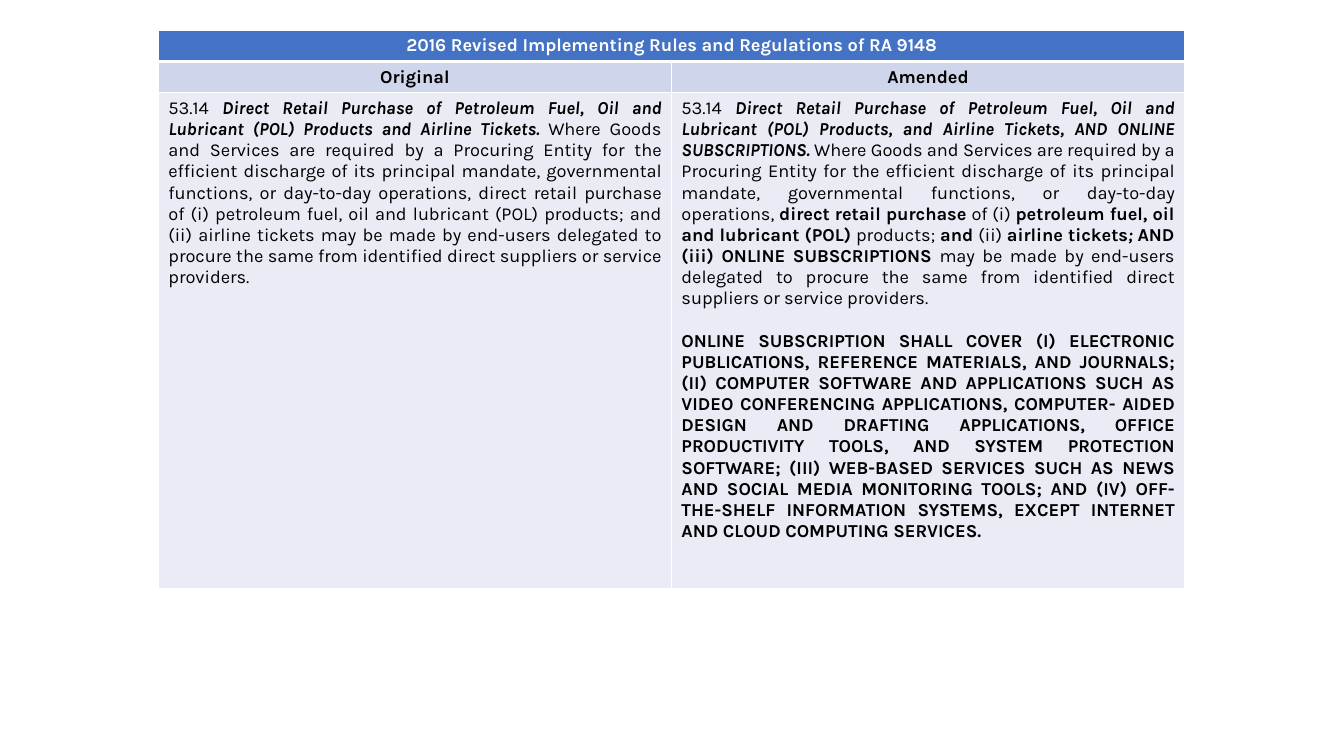
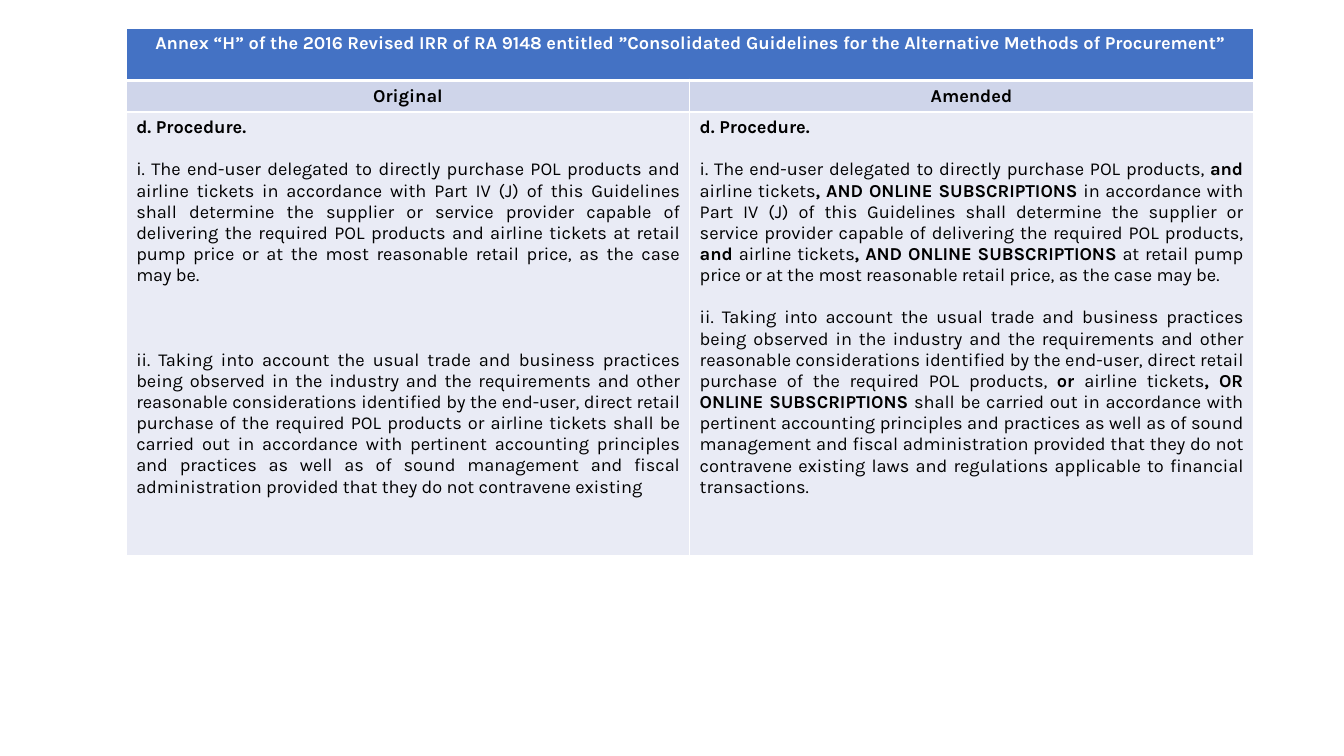
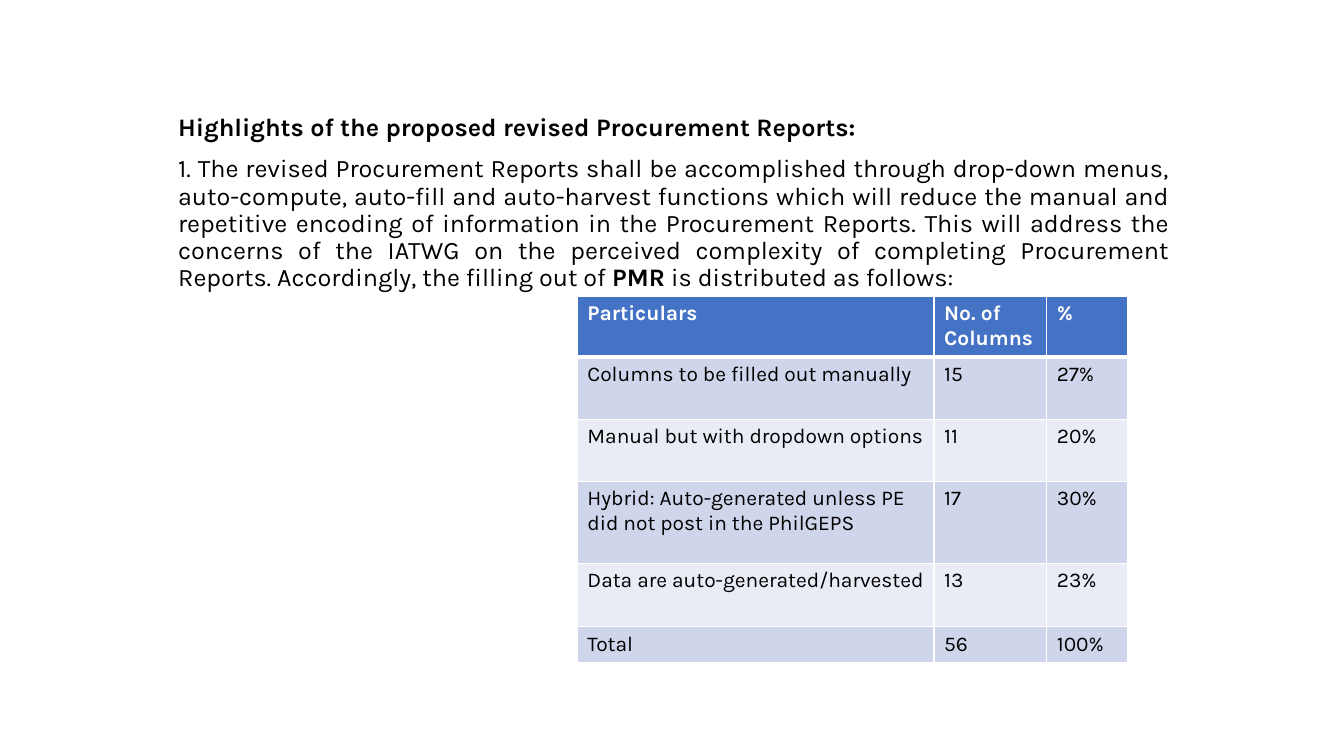
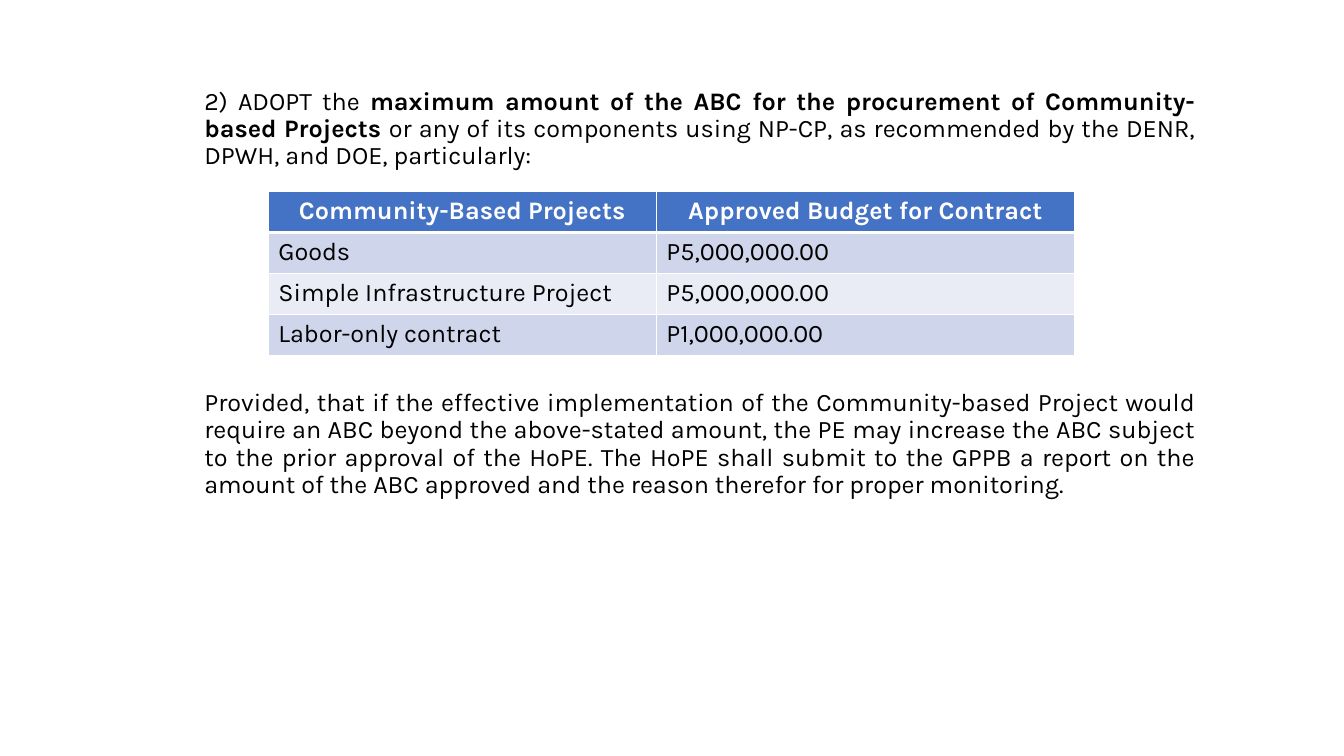
from dataclasses import dataclass

from lxml import etree
from pptx import Presentation, util as u
from pptx.dml import color
from pptx.enum import text as t
from pptx.oxml import ns

LEFT, MID, JUST = t.PP_ALIGN.LEFT, t.PP_ALIGN.CENTER, t.PP_ALIGN.JUSTIFY


@dataclass(frozen=True)
class Theme:
    font: str = "Karla"
    white: str = "FFFFFF"
    black: str = "000000"
    head: str = "4472C4"
    bands: tuple = ("CFD5EA", "E9EBF5")
    small: int = 13
    mid: int = 15
    large: int = 18
    thin: int = 1
    thick: int = 3
    line: float = 15.1


class Deck:
    def __init__(self, theme):
        self.theme = theme
        self.file = Presentation()
        self.file.slide_width = u.Cm(33.87)
        self.file.slide_height = u.Cm(19.05)
        self.slide = None

    def page(self):
        self.slide = self.file.slides.add_slide(self.file.slide_layouts[6])

    def words(self, frame, paras, size, ink, align, bold=False, lead=None):
        for i, (gap, words) in enumerate(paras):
            para = frame.paragraphs[0] if i == 0 else frame.add_paragraph()
            para.alignment = align
            para.line_spacing = lead
            if gap:
                para.space_before = u.Pt(gap)
            font = para.font
            font.name, font.size = self.theme.font, u.Pt(size)
            font.color.rgb = color.RGBColor.from_string(ink)
            parts = words.split("*")
            whole = len(parts) == 3 and not parts[0] and not parts[2]
            font.bold = bold or whole
            for j, part in enumerate(parts):
                for k, bit in enumerate(part.split("_")):
                    if not bit:
                        continue
                    run = para.add_run()
                    run.text = bit
                    if j % 2 and not whole:
                        run.font.bold = True
                    if k % 2:
                        run.font.italic = True

    def text(self, left, top, wide, high, paras):
        box = self.slide.shapes.add_textbox(*map(u.Cm, (left, top, wide, high)))
        box.text_frame.word_wrap = True
        look = self.theme
        self.words(box.text_frame, paras, look.large, look.black, JUST, lead=0.9)

    def edge(self, cell, sides):
        props = cell._tc.get_or_add_tcPr()
        for side, width in sides.items():
            line = etree.SubElement(props, ns.qn("a:ln" + side), w=str(u.Pt(width)))
            fill = etree.SubElement(line, ns.qn("a:solidFill"))
            etree.SubElement(fill, ns.qn("a:srgbClr"), val=self.theme.white)

    def table(self, left, top, cols, highs, rows, size, mids=0, align=LEFT):
        look = self.theme
        spot = map(u.Cm, (left, top, sum(cols), sum(highs)))
        grid = self.slide.shapes.add_table(len(highs), len(cols), *spot).table
        for col, wide in zip(grid.columns, cols):
            col.width = u.Cm(wide)
        for row, high in zip(grid.rows, highs):
            row.height = u.Cm(high)
        for i, row in enumerate(rows):
            if len(row) < len(cols):
                grid.cell(i, 0).merge(grid.cell(i, len(cols) - 1))
            for j in range(len(cols)):
                cell = grid.cell(i, j)
                self.edge(cell, {
                    "L": look.thin,
                    "R": look.thin,
                    "T": look.thick if i == 1 else look.thin,
                    "B": look.thick if i == 0 else look.thin,
                })
                cell.fill.solid()
                tone = look.bands[(i - 1) % 2] if i else look.head
                cell.fill.fore_color.rgb = color.RGBColor.from_string(tone)
                if j < len(row):
                    item = row[j]
                    paras = [(0, item)] if isinstance(item, str) else item
                    self.words(cell.text_frame, paras, size,
                               look.black if i else look.white,
                               MID if i < mids else align, bold=i == 0)

    def compare(self, left, top, wide, highs, title, old, new):
        self.page()
        rows = [[title], ["*Original*", "*Amended*"], [old, new]]
        self.table(left, top, [wide, wide], highs, rows, self.theme.small, 2, JUST)


def main():
    look = Theme()
    deck = Deck(look)
    gap = look.line

    deck.compare(
        3.99, 0.76, 12.93, [0.79, 0.79, 12.5],
        "2016 Revised Implementing Rules and Regulations of RA 9148",
        "53.14 *_Direct Retail Purchase of Petroleum Fuel, Oil and Lubricant (POL) "
        "Products and Airline Tickets. _*Where Goods and Services are required by a "
        "Procuring Entity for the efficient discharge of its principal mandate, "
        "governmental functions, or day-to-day operations, direct retail purchase of "
        "(i) petroleum fuel, oil and lubricant (POL) products; and (ii) airline tickets "
        "may be made by end-users delegated to procure the same from identified direct "
        "suppliers or service providers.",
        [(0, "53.14 *_Direct Retail Purchase of Petroleum Fuel, Oil and Lubricant (POL) "
             "Products, and Airline Tickets, AND ONLINE SUBSCRIPTIONS. _*Where Goods and "
             "Services are required by a Procuring Entity for the efficient discharge of "
             "its principal mandate, governmental functions, or day-to-day operations, "
             "*direct retail purchase *of (i) *petroleum fuel, oil and lubricant (POL) "
             "*products; *and *(ii) *airline tickets_; _AND (iii) ONLINE SUBSCRIPTIONS "
             "*may be made by end-users delegated to procure the same from identified "
             "direct suppliers or service providers."),
         (gap, "*ONLINE SUBSCRIPTION SHALL COVER (I) ELECTRONIC PUBLICATIONS, REFERENCE "
               "MATERIALS, AND JOURNALS; (II) COMPUTER SOFTWARE AND APPLICATIONS SUCH AS "
               "VIDEO CONFERENCING APPLICATIONS, COMPUTER- AIDED DESIGN AND DRAFTING "
               "APPLICATIONS, OFFICE PRODUCTIVITY TOOLS, AND SYSTEM PROTECTION SOFTWARE; "
               "(III) WEB-BASED SERVICES SUCH AS NEWS AND SOCIAL MEDIA MONITORING TOOLS; "
               "AND (IV) OFF-THE-SHELF INFORMATION SYSTEMS, EXCEPT INTERNET AND CLOUD "
               "COMPUTING SERVICES.*")])

    deck.compare(
        3.18, 0.71, 14.2, [1.32, 0.79, 11.18],
        "Annex “H” of the 2016 Revised IRR of RA 9148 entitled ”Consolidated Guidelines "
        "for the Alternative Methods of Procurement”",
        [(0, "*d. Procedure.*"),
         (gap, "i. The end-user delegated to directly purchase POL products and airline "
               "tickets in accordance with Part IV (J) of this Guidelines shall determine "
               "the supplier or service provider capable of delivering the required POL "
               "products and airline tickets at retail pump price or at the most "
               "reasonable retail price, as the case may be."),
         (3 * gap, "ii. Taking into account the usual trade and business practices being "
                   "observed in the industry and the requirements and other reasonable "
                   "considerations identified by the end-user, direct retail purchase of "
                   "the required POL products or airline tickets shall be carried out in "
                   "accordance with pertinent accounting principles and practices as well "
                   "as of sound management and fiscal administration provided that they "
                   "do not contravene existing")],
        [(0, "*d. Procedure.*"),
         (gap, "i. The end-user delegated to directly purchase POL products, *and *airline "
               "tickets*, AND ONLINE SUBSCRIPTIONS *in accordance with Part IV (J) of this "
               "Guidelines shall determine the supplier or service provider capable of "
               "delivering the required POL products, *and *airline tickets*, AND ONLINE "
               "SUBSCRIPTIONS *at retail pump price or at the most reasonable retail "
               "price, as the case may be."),
         (gap, "ii. Taking into account the usual trade and business practices being "
               "observed in the industry and the requirements and other reasonable "
               "considerations identified by the end-user, direct retail purchase of the "
               "required POL products, *or *airline tickets*, OR ONLINE SUBSCRIPTIONS "
               "*shall be carried out in accordance with pertinent accounting principles "
               "and practices as well as of sound management and fiscal administration "
               "provided that they do not contravene existing laws and regulations "
               "applicable to financial transactions.")])

    deck.page()
    deck.text(4.24, 2.77, 25.48, 11.8, [
        (0, "*Highlights of the proposed revised Procurement Reports:*"),
        (10, "1. The revised Procurement Reports shall be accomplished through drop-down "
             "menus, auto-compute, auto-fill and auto-harvest functions which will reduce "
             "the manual and repetitive encoding of information in the Procurement "
             "Reports. This will address the concerns of the IATWG on the perceived "
             "complexity of completing Procurement Reports. Accordingly, the filling out "
             "of *PMR* is distributed as follows:")])
    deck.table(14.55, 7.47, [8.99, 2.84, 2.03], [1.49, 1.57, 1.57, 2.06, 1.6, 0.87], [
        ["Particulars", "No. of Columns", "%"],
        ["Columns to be filled out manually", "15", "27%"],
        ["Manual but with dropdown options", "11", "20%"],
        ["Hybrid: Auto-generated unless PE did not post in the PhilGEPS", "17", "30%"],
        ["Data are auto-generated/harvested", "13", "23%"],
        ["Total", "56", "100%"]], look.mid)

    deck.page()
    deck.text(4.9, 2.11, 25.48, 14.86, [
        (0, "2) ADOPT the *maximum amount of the ABC for the procurement of "
            "Community-based Projects *or any of its components using NP-CP, as "
            "recommended by the DENR, DPWH, and DOE, particularly:"),
        (156.8, "Provided, that if the effective implementation of the Community-based "
                "Project would require an ABC beyond the above-stated amount, the PE may "
                "increase the ABC subject to the prior approval of the HoPE. The HoPE "
                "shall submit to the GPPB a report on the amount of the ABC approved and "
                "the reason therefor for proper monitoring.")])
    deck.table(6.76, 4.83, [9.78, 10.54], [1.03] * 4, [
        ["Community-Based Projects", "Approved Budget for Contract"],
        ["Goods", "P5,000,000.00"],
        ["Simple Infrastructure Project", "P5,000,000.00"],
        ["Labor-only contract", "P1,000,000.00"]], look.large, 1)

    deck.file.save("out.pptx")


if __name__ == "__main__":
    main()
